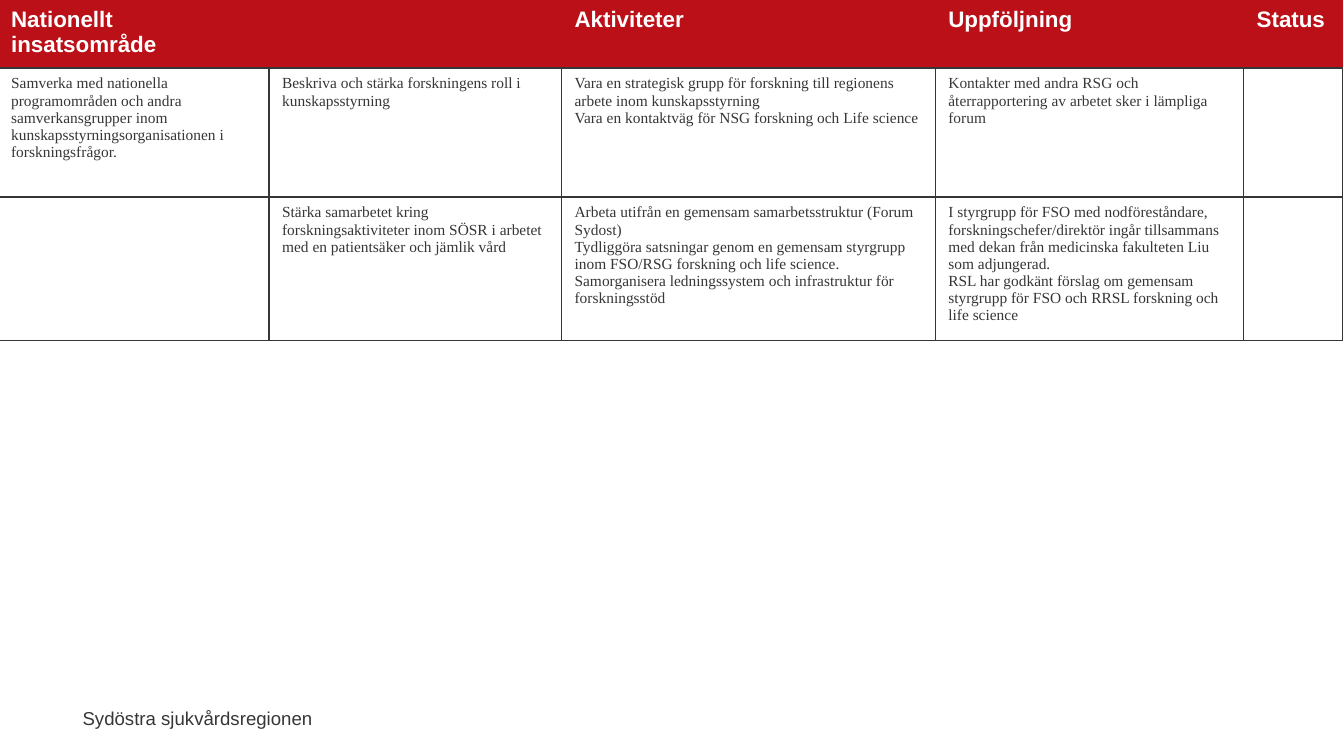
from dataclasses import dataclass

from lxml import etree
from pptx import Presentation
from pptx import util as u
from pptx.dml import color
from pptx.enum import text as t
from pptx.oxml import ns


@dataclass(frozen=True)
class Theme:
    red: str = "BC1018"
    ink: str = "363636"
    soft_ink: str = "393939"
    white: str = "FFFFFF"
    sans: str = "Arial"
    serif: str = "Times New Roman"
    header_size: float = 16
    body_size: float = 11
    footer_size: float = 13.3


theme = Theme()


def write(frame, text, *, font, size, ink, bold=False, align=t.PP_ALIGN.LEFT):
    for index, line in enumerate(text.split("\n")):
        para = frame.add_paragraph() if index else frame.paragraphs[0]
        para.alignment = align
        span = para.add_run()
        span.text = line
        span.font.name = font
        span.font.size = u.Pt(size)
        span.font.bold = bold
        span.font.color.rgb = color.RGBColor.from_string(ink)


def draw_border(cell, side, ink, points):
    line = etree.SubElement(
        cell._tc.get_or_add_tcPr(), ns.qn(f"a:ln{side}"), w=str(u.Pt(points))
    )
    fill = etree.SubElement(line, ns.qn("a:solidFill"))
    etree.SubElement(fill, ns.qn("a:srgbClr"), val=ink)


deck = Presentation()
deck.slide_width = u.Cm(33.87)
deck.slide_height = u.Cm(19.05)
page = deck.slides.add_slide(deck.slide_layouts[6])

footer = page.shapes.add_textbox(u.Cm(1.78), u.Cm(17.68), u.Cm(6.35), u.Cm(0.84))
footer.text_frame.word_wrap = False
footer.text_frame.auto_size = t.MSO_AUTO_SIZE.SHAPE_TO_FIT_TEXT
write(footer.text_frame, "Sydöstra sjukvårdsregionen", font=theme.sans,
      size=theme.footer_size, ink=theme.ink, align=t.PP_ALIGN.RIGHT)

column_widths = [6.83, 7.37, 9.42, 7.77, 2.49]
row_heights = [1.67, 3.25, 3.6]
rows = [
    ["Nationellt insatsområde", "", "Aktiviteter", "Uppföljning", "Status"],
    [
        "Samverka med nationella programområden och andra samverkansgrupper "
        "inom kunskapsstyrningsorganisationen i forskningsfrågor.",
        "Beskriva och stärka forskningens roll i kunskapsstyrning",
        "Vara en strategisk grupp för forskning till regionens arbete inom "
        "kunskapsstyrning\n"
        "Vara en kontaktväg för NSG forskning och Life science",
        "Kontakter med andra RSG och återrapportering av arbetet sker i "
        "lämpliga forum",
        "",
    ],
    [
        "",
        "Stärka samarbetet kring forskningsaktiviteter inom SÖSR i arbetet "
        "med en patientsäker och jämlik vård",
        "Arbeta utifrån en gemensam samarbetsstruktur (Forum Sydost)\n"
        "Tydliggöra satsningar genom en gemensam styrgrupp inom FSO/RSG "
        "forskning och life science.\n"
        "Samorganisera ledningssystem och infrastruktur för forskningsstöd",
        "I styrgrupp för FSO med nodföreståndare, forskningschefer/direktör "
        "ingår tillsammans med dekan från medicinska fakulteten Liu som "
        "adjungerad.\n"
        "RSL har godkänt förslag om gemensam styrgrupp för FSO och RRSL "
        "forskning och life science",
        "",
    ],
]

table = page.shapes.add_table(
    len(row_heights), len(column_widths), u.Cm(-0.05), u.Cm(0),
    u.Cm(sum(column_widths)), u.Cm(sum(row_heights)),
).table
table.horz_banding = False
for column, width in zip(table.columns, column_widths):
    column.width = u.Cm(width)
for row, height in zip(table.rows, row_heights):
    row.height = u.Cm(height)

for row_index, row in enumerate(rows):
    is_header = row_index == 0
    for column_index, words in enumerate(row):
        cell = table.cell(row_index, column_index)
        cell.margin_left = cell.margin_right = u.Cm(0.33)
        cell.margin_top = cell.margin_bottom = u.Cm(0.18)
        for side in "LRTB":
            if is_header and side != "B":
                draw_border(cell, side, theme.red, 0.75)
            else:
                draw_border(cell, side, theme.ink, 1)
        cell.fill.solid()
        cell.fill.fore_color.rgb = color.RGBColor.from_string(
            theme.red if is_header else theme.white
        )
        if words and is_header:
            write(cell.text_frame, words, font=theme.sans,
                  size=theme.header_size, ink=theme.white, bold=True)
        elif words:
            write(cell.text_frame, words, font=theme.serif, size=theme.body_size,
                  ink=theme.soft_ink if (row_index, column_index) == (1, 3) else theme.ink)

deck.save("out.pptx")
